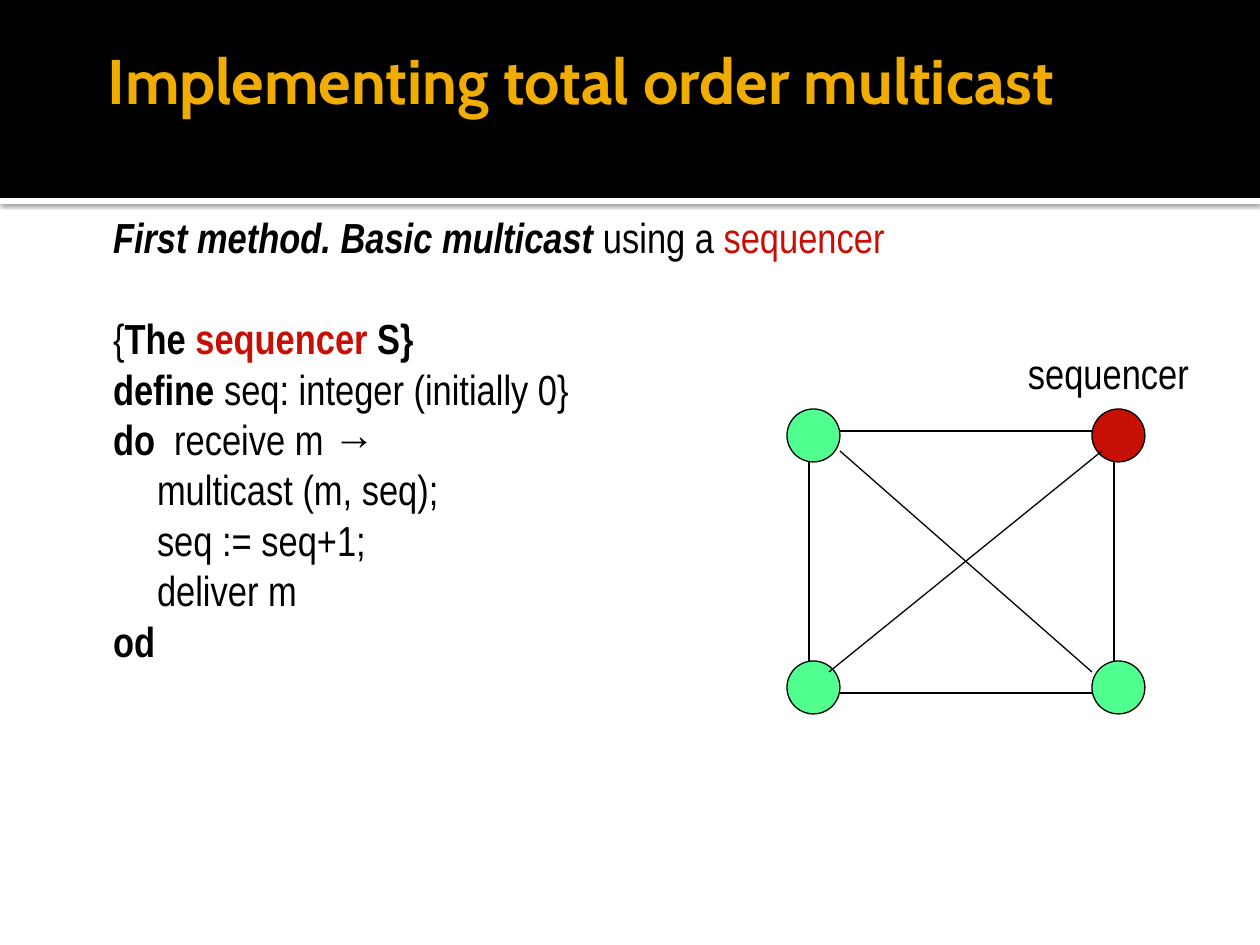
from lxml import etree
from pptx import Presentation
from pptx import util as u
from pptx.dml.color import RGBColor
from pptx.enum import shapes, text
from pptx.oxml import parse_xml
from pptx.oxml.ns import nsdecls, qn

BLACK = RGBColor(0x00, 0x00, 0x00)
WHITE = RGBColor(0xFF, 0xFF, 0xFF)
GOLD = RGBColor(0xF0, 0xAD, 0x00)
RED = RGBColor(0xC7, 0x0F, 0x05)
GREEN = RGBColor(0x51, 0xFF, 0x91)

RECTANGLE = shapes.MSO_SHAPE.RECTANGLE
OVAL = shapes.MSO_SHAPE.OVAL


class SlideBuilder:
    scale = u.Inches(1) / 126
    body_font = "Arial Narrow"
    title_font = "Cabin"
    body_size = 24
    title_size = 36
    line_width = u.Pt(0.75)
    line_pitch = u.Pt(28.8)

    def __init__(self, slide):
        self.slide = slide

    def emu(self, *lengths):
        return [round(length * self.scale) for length in lengths]

    def shape(self, kind, box, fill=None, line=None):
        shape = self.slide.shapes.add_shape(kind, *self.emu(*box))
        shape.shadow.inherit = False
        if fill is None:
            shape.fill.background()
        else:
            shape.fill.solid()
            shape.fill.fore_color.rgb = fill
        if line is None:
            shape.line.fill.background()
        else:
            shape.line.color.rgb = line
            shape.line.width = self.line_width
        return shape

    def drop_shadow(self, shape):
        effects = shape._element.spPr.find(qn("a:effectLst"))
        effects.append(parse_xml(
            f'<a:outerShdw {nsdecls("a")} blurRad="31750" dist="10160" dir="5400000">'
            '<a:srgbClr val="000000"><a:alpha val="60000"/></a:srgbClr></a:outerShdw>'))

    def line(self, start, end):
        connector = self.slide.shapes.add_connector(
            shapes.MSO_CONNECTOR.STRAIGHT, *self.emu(*start, *end))
        connector.line.color.rgb = BLACK
        connector.line.width = self.line_width
        etree.SubElement(connector._element.spPr, qn("a:effectLst"))

    def text_box(self, box, insets=(13, 6, 13, 6), wrap=True):
        frame = self.slide.shapes.add_textbox(*self.emu(*box)).text_frame
        frame.word_wrap = wrap
        (frame.margin_left, frame.margin_top,
         frame.margin_right, frame.margin_bottom) = self.emu(*insets)
        return frame

    def style(self, run, font, size, color=BLACK, bold=False, italic=False):
        run.font.name = font
        run.font.size = u.Pt(size)
        run.font.color.rgb = color
        run.font.bold = bold
        run.font.italic = italic

    def title(self, box, words):
        frame = self.text_box(box, insets=(13, 6, 6, 6))
        frame.vertical_anchor = text.MSO_ANCHOR.MIDDLE
        frame.text = words
        self.style(frame.paragraphs[0].runs[0], self.title_font, self.title_size,
                   GOLD, bold=True)

    def label(self, box, words):
        frame = self.text_box(box, wrap=False)
        frame.auto_size = text.MSO_AUTO_SIZE.SHAPE_TO_FIT_TEXT
        frame.text = words
        self.style(frame.paragraphs[0].runs[0], self.body_font, self.body_size)

    def body(self, box, lines):
        """Each line is (indent in px, [(words, style options), ...])."""
        frame = self.text_box(box, insets=(13, 13, 13, 6))
        for index, (indent, parts) in enumerate(lines):
            paragraph = frame.add_paragraph() if index else frame.paragraphs[0]
            paragraph.line_spacing = self.line_pitch
            paragraph._p.get_or_add_pPr().set("marL", str(self.emu(indent)[0]))
            for words, options in parts:
                run = paragraph.add_run()
                run.text = words
                self.style(run, self.body_font, self.body_size, **options)
        return frame


def main():
    presentation = Presentation()
    presentation.slide_width = u.Inches(10)
    presentation.slide_height = u.Inches(7.5)
    slide = presentation.slides.add_slide(presentation.slide_layouts[6])
    builder = SlideBuilder(slide)

    # Header band with a shadowed white strip under it
    strip = builder.shape(RECTANGLE, (0, 198, 1260, 6), WHITE)
    builder.drop_shadow(strip)
    builder.shape(RECTANGLE, (0, 0, 1260, 198), BLACK)
    builder.title((95, 0, 1071, 158), "Implementing total order multicast")

    # Sequencer algorithm
    plain, bold = {}, {"bold": True}
    margin, nested = 16, 60
    frame = builder.body((84, 199, 987, 567), [
        (margin, [("First method. Basic multicast", {"bold": True, "italic": True}),
                  (" using a ", plain), ("sequencer", {"color": RED})]),
        (margin, [("{", plain), ("The ", bold),
                  ("sequencer", {"bold": True, "color": RED}), (" S}", bold)]),
        (margin, [("define", bold), (" seq: integer (initially 0}", plain)]),
        (margin, [("do", bold), ("  receive m →", plain)]),
        (nested, [("multicast (m, seq);", plain)]),
        (nested, [("seq := seq+1;", plain)]),
        (nested, [("deliver m", plain)]),
        (margin, [("od", bold)]),
    ])
    code = frame.paragraphs[1:]
    code[0].space_before = builder.line_pitch
    for paragraph in code:
        paragraph.alignment = text.PP_ALIGN.JUSTIFY

    # Network: outer links, four nodes, diagonal links
    builder.shape(RECTANGLE, (809, 431, 305, 262), line=BLACK)
    node_size = 53
    left, right, top, bottom = 787, 1092, 409, 661
    for x, y, color in ((left, top, GREEN), (right, bottom, GREEN),
                        (right, top, RED), (left, bottom, GREEN)):
        builder.shape(OVAL, (x, y, node_size, node_size), color, BLACK)
    builder.line((840, 451), (1092, 672))
    builder.line((1102, 451), (829, 672))
    builder.label((1015, 342, 190, 63), "sequencer")

    presentation.save("out.pptx")


if __name__ == "__main__":
    main()
